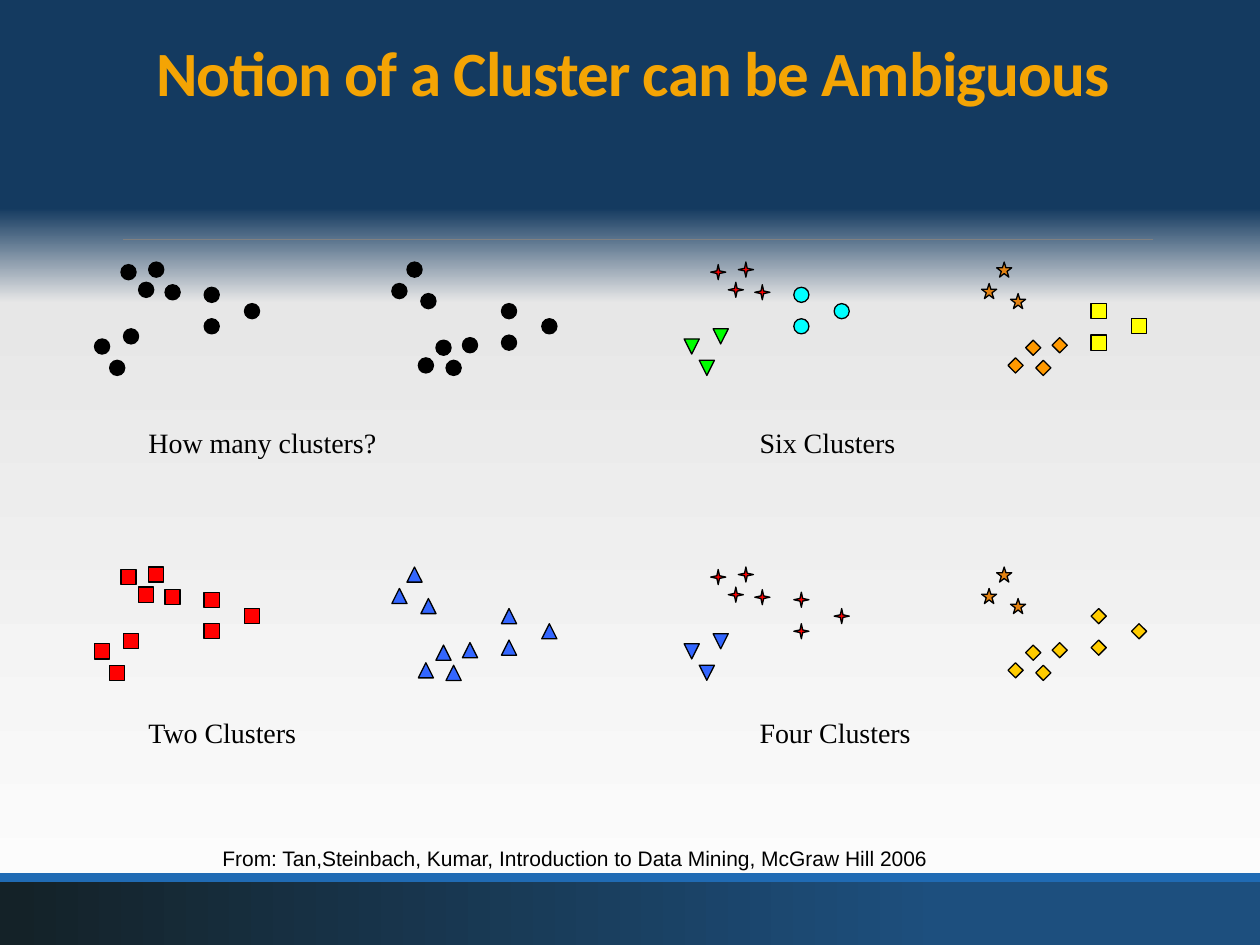
from copy import deepcopy
from dataclasses import dataclass

from pptx import Presentation
from pptx.dml.color import RGBColor
from pptx.enum.shapes import MSO_CONNECTOR, MSO_SHAPE
from pptx.enum.text import MSO_ANCHOR, PP_ALIGN
from pptx.oxml.ns import qn
from pptx.util import Inches, Pt


@dataclass(frozen=True)
class Theme:
    navy: str = "143A60"
    pale: str = "E7E7E7"
    white: str = "FEFEFE"
    gold: str = "F4A404"
    blue: str = "206BB4"
    footer_dark: str = "142228"
    footer_blue: str = "1D4F7E"
    rule: str = "808080"
    ink: str = "000000"
    title_font: str = "Calibri"
    label_font: str = "Times New Roman"
    source_font: str = "Arial"
    title_size: float = 36
    label_size: float = 16
    source_size: float = 12
    outline: float = 0.75
    rule_width: float = 0.5


MARKER_SIZE = 0.12
CLOUD_HEIGHT = 0.78
RIGHT_CLOUD_SHIFT = 2.36

# Marker positions in the left cloud; the right cloud mirrors them vertically.
ARC = [(0.56, 0.18), (0.21, 0.02), (0.43, 0), (0.35, 0.16)]
CORNER = [(0.23, 0.53), (0, 0.61), (0.12, 0.78)]
WING = [(0.87, 0.2), (1.19, 0.33), (0.87, 0.45)]
SUBCLOUDS = [ARC, CORNER, WING]

BLACK_DOT = (MSO_SHAPE.OVAL, "000000")
RED_SQUARE = (MSO_SHAPE.RECTANGLE, "FF0000")
YELLOW_SQUARE = (MSO_SHAPE.RECTANGLE, "FFFF00")
CYAN_DOT = (MSO_SHAPE.OVAL, "00FFFF")
RED_STAR = (MSO_SHAPE.STAR_4_POINT, "FF0000")
ORANGE_STAR = (MSO_SHAPE.STAR_5_POINT, "E48312")
BLUE_TRIANGLE = (MSO_SHAPE.ISOSCELES_TRIANGLE, "3366FF")
GREEN_TRIANGLE = (MSO_SHAPE.ISOSCELES_TRIANGLE, "00FF00")
BLUE_EXTRACT = (MSO_SHAPE.FLOWCHART_EXTRACT, "3366FF")
ORANGE_DIAMOND = (MSO_SHAPE.DIAMOND, "FF9900")
GOLD_DIAMOND = (MSO_SHAPE.DIAMOND, "FFCC00")

# Caption, cloud origin, caption position, then the markers of the
# arc, corner and wing for the left cloud and for the right cloud.
PANELS = [
    ("How many clusters?", (0.75, 2.08), (1.08, 3.33),
     [BLACK_DOT] * 3, [BLACK_DOT] * 3),
    ("Four Clusters", (5.43, 4.5), (5.93, 5.63),
     [RED_STAR, BLUE_EXTRACT, RED_STAR],
     [GOLD_DIAMOND, ORANGE_STAR, GOLD_DIAMOND]),
    ("Two Clusters", (0.75, 4.5), (1.08, 5.63),
     [RED_SQUARE] * 3, [BLUE_TRIANGLE] * 3),
    ("Six Clusters", (5.43, 2.08), (5.93, 3.33),
     [RED_STAR, GREEN_TRIANGLE, CYAN_DOT],
     [ORANGE_DIAMOND, ORANGE_STAR, YELLOW_SQUARE]),
]


class SlideBuilder:
    """Draws themed elements on one slide."""

    def __init__(self, slide, theme):
        self.slide = slide
        self.theme = theme

    def gradient(self, fill, owner, stops, angle):
        """Fill with (position, colour) stops; owner is the XML holding the fill."""
        fill.gradient()
        fill.gradient_angle = angle
        stop_list = next(owner.iter(qn("a:gsLst")))
        while len(stop_list) < len(stops):
            stop_list.append(deepcopy(stop_list[-1]))
        for stop, (position, color) in zip(fill.gradient_stops, stops):
            stop.position = position
            stop.color.rgb = RGBColor.from_string(color)

    def background(self, stops, angle):
        self.gradient(self.slide.background.fill, self.slide.element, stops, angle)

    def bar(self, top, height, color=None, stops=None):
        bar = self.slide.shapes.add_shape(
            MSO_SHAPE.RECTANGLE, 0, Inches(top), Inches(10), Inches(height))
        bar.shadow.inherit = False
        bar.line.fill.background()
        if stops:
            self.gradient(bar.fill, bar.element, stops, 0)
        else:
            bar.fill.solid()
            bar.fill.fore_color.rgb = RGBColor.from_string(color)

    def rule(self, left, right, y):
        rule = self.slide.shapes.add_connector(
            MSO_CONNECTOR.STRAIGHT, Inches(left), Inches(y), Inches(right), Inches(y))
        rule.line.color.rgb = RGBColor.from_string(self.theme.rule)
        rule.line.width = Pt(self.theme.rule_width)
        properties = rule.element.spPr
        properties.append(properties.makeelement(qn("a:effectLst"), {}))

    def set_text(self, frame, text, font, size, color, bold=False):
        """Fill a frame with one formatted paragraph and return it."""
        frame.word_wrap = True
        frame.text = text
        paragraph = frame.paragraphs[0]
        run_font = paragraph.runs[0].font
        run_font.name = font
        run_font.size = Pt(size)
        run_font.bold = bold
        run_font.color.rgb = RGBColor.from_string(color)
        return paragraph

    def title(self, text):
        title = self.slide.shapes.title
        title.left, title.top = Inches(1.14), Inches(0.21)
        title.width, title.height = Inches(8.84), Inches(0.71)
        frame = title.text_frame
        paragraph = self.set_text(frame, text, self.theme.title_font,
                                  self.theme.title_size, self.theme.gold, bold=True)
        frame.vertical_anchor = MSO_ANCHOR.BOTTOM
        paragraph.alignment = PP_ALIGN.LEFT
        paragraph.line_spacing = 0.85
        next(title.element.iter(qn("a:rPr"))).set("spc", "-50")

    def marker(self, panel, kind, color, left, top, flipped):
        marker = panel.shapes.add_shape(
            kind, Inches(left), Inches(top), Inches(MARKER_SIZE), Inches(MARKER_SIZE))
        marker.shadow.inherit = False
        marker.fill.solid()
        marker.fill.fore_color.rgb = RGBColor.from_string(color)
        marker.line.color.rgb = RGBColor.from_string(self.theme.ink)
        marker.line.width = Pt(self.theme.outline)
        if kind == MSO_SHAPE.STAR_4_POINT:
            marker.adjustments[0] = 0.125
        if flipped:
            marker.element.spPr.find(qn("a:xfrm")).set("flipV", "1")

    def cloud(self, panel, origin, markers, flipped):
        """Draw ten points; the unflipped cloud is the shifted mirror image."""
        for (kind, color), points in zip(markers, SUBCLOUDS):
            for x, y in points:
                if not flipped:
                    x, y = x + RIGHT_CLOUD_SHIFT, CLOUD_HEIGHT - y
                self.marker(panel, kind, color, origin[0] + x, origin[1] + y, flipped)

    def panel(self, caption, origin, caption_at, left_markers, right_markers):
        panel = self.slide.shapes.add_group_shape()
        self.cloud(panel, origin, right_markers, flipped=False)
        self.cloud(panel, origin, left_markers, flipped=True)
        left, top = caption_at
        box = panel.shapes.add_textbox(
            Inches(left), Inches(top), Inches(2.5), Inches(0.37))
        self.set_text(box.text_frame, caption, self.theme.label_font,
                      self.theme.label_size, self.theme.ink)

    def source(self, text):
        box = self.slide.shapes.add_textbox(
            Inches(1.42), Inches(6.51), Inches(6.29), Inches(0.4))
        frame = box.text_frame
        frame.margin_left = frame.margin_right = 0
        frame.margin_top = frame.margin_bottom = 0
        frame.vertical_anchor = MSO_ANCHOR.BOTTOM
        paragraph = self.set_text(frame, text, self.theme.source_font,
                                  self.theme.source_size, self.theme.ink)
        paragraph.alignment = PP_ALIGN.CENTER
        paragraph.line_spacing = Pt(20)


def main():
    presentation = Presentation()
    presentation.slide_width, presentation.slide_height = Inches(10), Inches(7.5)
    theme = Theme()
    builder = SlideBuilder(
        presentation.slides.add_slide(presentation.slide_layouts[5]), theme)
    builder.background([(0, theme.white), (0.68, theme.pale), (0.78, theme.navy)], 90)
    builder.bar(7, 0.5, stops=[(0.01, theme.footer_dark), (0.75, theme.footer_blue)])
    builder.bar(6.93, 0.07, color=theme.blue)
    builder.rule(0.98, 9.15, 1.9)
    builder.title("Notion of a Cluster can be Ambiguous")
    for panel in PANELS:
        builder.panel(*panel)
    builder.source(
        "From: Tan,Steinbach, Kumar, Introduction to Data Mining, McGraw Hill 2006")
    presentation.save("out.pptx")


if __name__ == "__main__":
    main()
